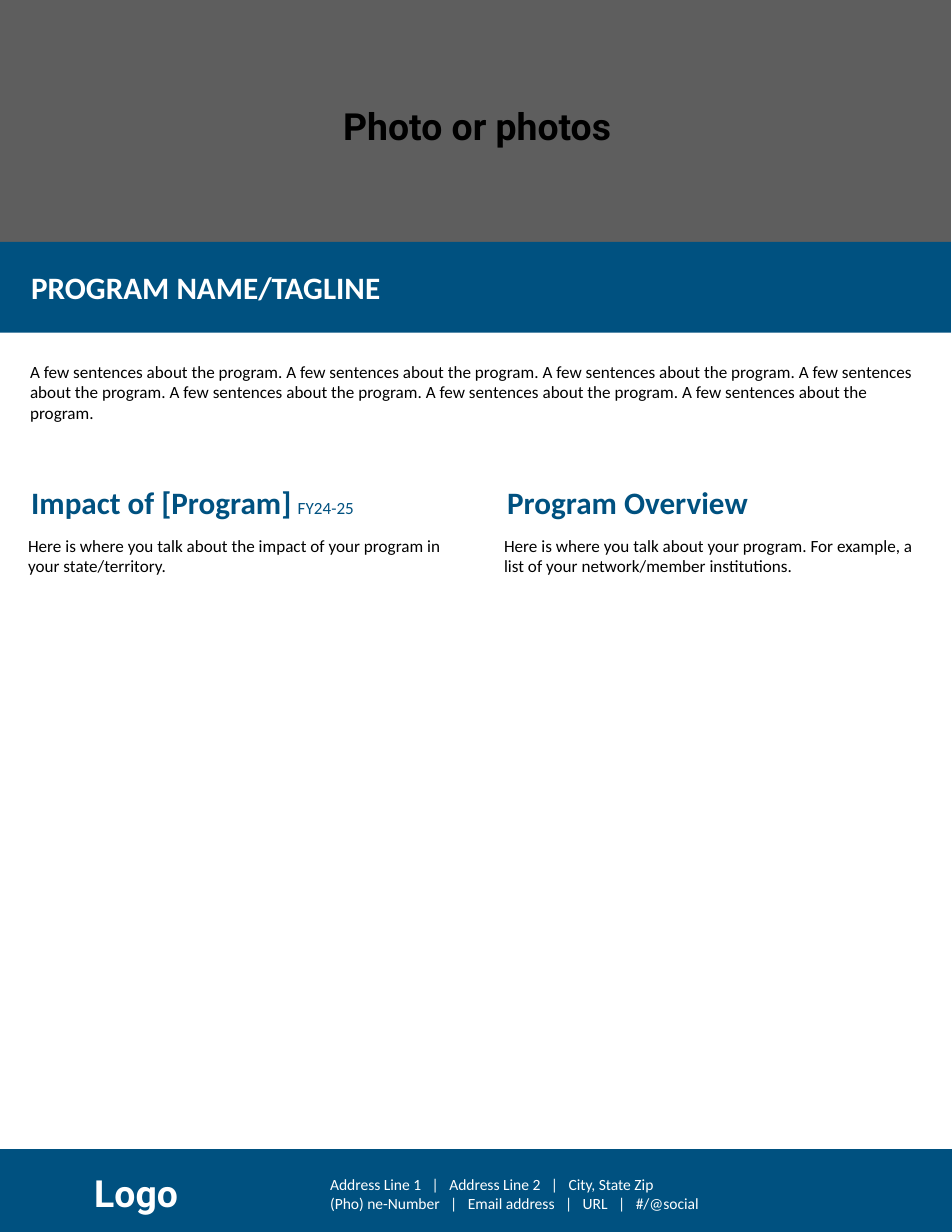
from pptx import Presentation
from pptx.dml.color import RGBColor
from pptx.enum.shapes import MSO_SHAPE
from pptx.enum.text import MSO_ANCHOR, PP_ALIGN
from pptx.util import Pt

RECTANGLE = MSO_SHAPE.RECTANGLE
TOP, MIDDLE = MSO_ANCHOR.TOP, MSO_ANCHOR.MIDDLE
LEFT, CENTER = PP_ALIGN.LEFT, PP_ALIGN.CENTER

COLORS = {"blue": "005180", "gray": "5E5E5E", "black": "000000", "white": "FFFFFF"}
PAGE_WIDTH, PAGE_HEIGHT = 612, 792
COLUMN_LEFTS = (18, 324)
HEADING_TOP, BODY_TOP = 308.16, 344.16
COLUMN_WIDTH = 270
PADDING = 2

# Bands: left, top, width, height, color
BANDS = [
    (-0.72, -1.44, 612, 188.64, "gray"),
    (-0.72, 155.52, 612, 58.32, "blue"),
    (0, 738.72, 613.44, 58.32, "blue"),
]

INTRO = " ".join(["A few sentences about the program."] * 7)

# Columns: heading runs as (text, size, bold), then body text
COLUMNS = [
    ([("Impact of [Program]", 20, True), (" ", 17, True), ("FY24-25", 11, False)],
     "Here is where you talk about the impact of your program in your state/territory."),
    ([("Program Overview", 20, True)],
     "Here is where you talk about your program. For example, a list of your "
     "network/member institutions."),
]

SEPARATOR = "   |   "
CONTACT_LINES = [
    ("Address Line 1", "Address Line 2", "City, State Zip"),
    ("(Pho) ne-Number", "Email address", "URL", "#/@social"),
]


def rgb(name):
    return RGBColor.from_string(COLORS[name])


def add_band(page, left, top, width, height, color):
    band = page.shapes.add_shape(RECTANGLE, Pt(left), Pt(top), Pt(width), Pt(height))
    band.shadow.inherit = False
    band.fill.solid()
    band.fill.fore_color.rgb = rgb(color)
    band.line.fill.background()


def add_text(page, place, paragraphs, color, font="Calibri", align=LEFT,
             anchor=MIDDLE, padding=PADDING):
    """Add a text box; each paragraph is a list of (text, size, bold) runs."""
    box = page.shapes.add_textbox(*(Pt(length) for length in place))
    frame = box.text_frame
    frame.word_wrap = True
    frame.vertical_anchor = anchor
    frame.margin_left = frame.margin_right = Pt(padding)
    frame.margin_top = frame.margin_bottom = Pt(padding)
    for index, runs in enumerate(paragraphs):
        para = frame.add_paragraph() if index else frame.paragraphs[0]
        para.alignment = align
        for text, size, bold in runs:
            span = para.add_run()
            span.text = text
            span.font.name = font
            span.font.size = Pt(size)
            span.font.bold = bold
            span.font.color.rgb = rgb(color)


def main():
    deck = Presentation()
    deck.slide_width, deck.slide_height = Pt(PAGE_WIDTH), Pt(PAGE_HEIGHT)
    page = deck.slides.add_slide(deck.slide_layouts[6])

    for band in BANDS:
        add_band(page, *band)

    add_text(page, (210.96, 64.08, 191.52, 33.84), [[("Photo or photos", 24, True)]],
             "black", "Roboto", CENTER)
    add_text(page, (18, 169.92, 576.72, 28.8), [[("PROGRAM NAME/TAGLINE", 20, True)]],
             "white")
    add_text(page, (17.28, 229.68, 575.28, 44.64), [[(INTRO, 11, False)]], "black")

    for left, (heading, body) in zip(COLUMN_LEFTS, COLUMNS):
        add_text(page, (left, HEADING_TOP, COLUMN_WIDTH, 28.8), [heading], "blue")
        add_text(page, (left, BODY_TOP, COLUMN_WIDTH, 33.84), [[(body, 11, False)]],
                 "black", anchor=TOP, padding=0)

    contact = [[(SEPARATOR.join(parts), 10, False)] for parts in CONTACT_LINES]
    add_text(page, (210.24, 753.12, 352.8, 28.8), contact, "white")
    add_text(page, (17.28, 749.52, 140.4, 33.84), [[("Logo", 24, True)]],
             "white", "Roboto", CENTER)

    deck.save("out.pptx")


if __name__ == "__main__":
    main()
